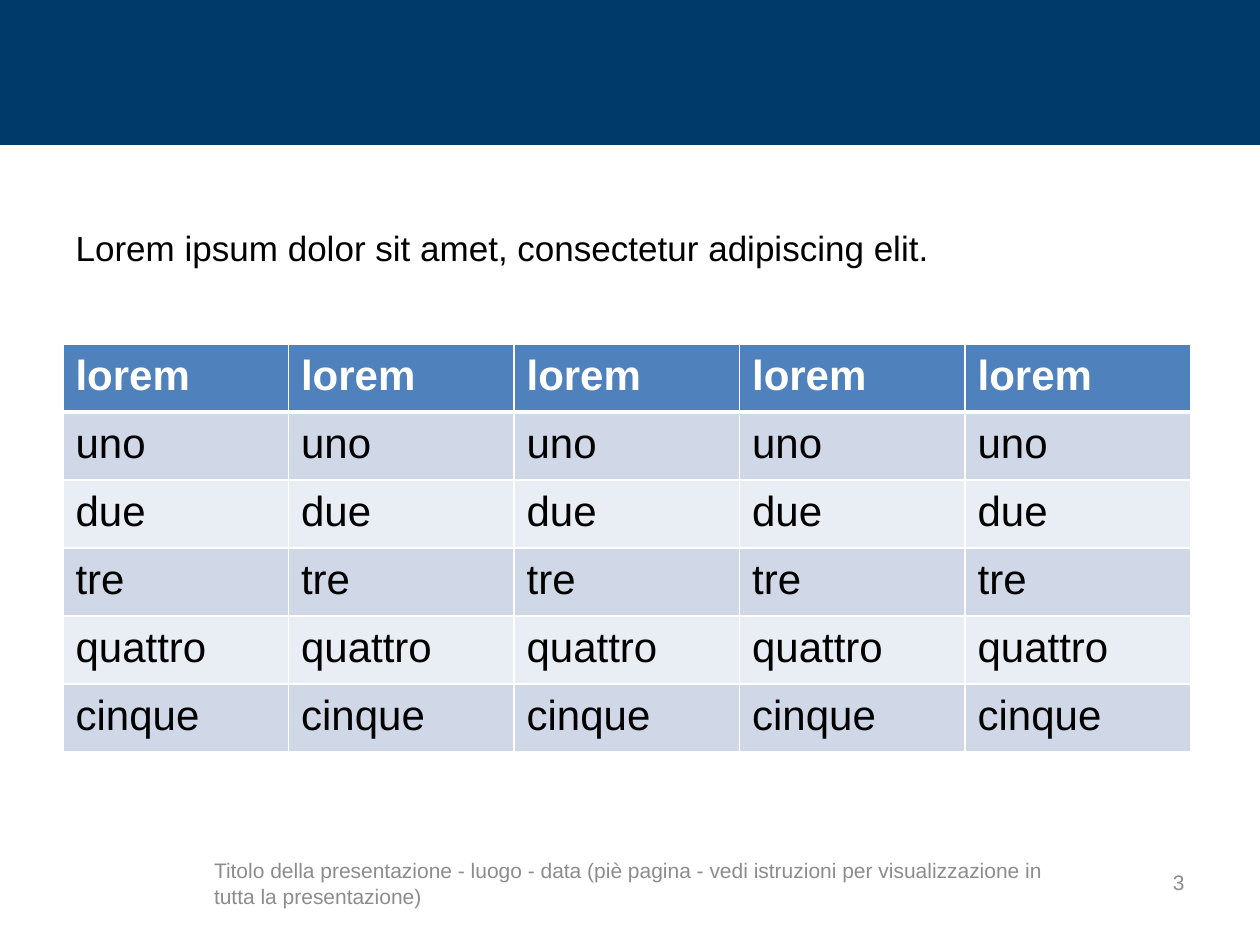
from dataclasses import dataclass

from lxml import etree
from pptx import Presentation
from pptx import util as u
from pptx.dml.color import RGBColor
from pptx.enum import shapes, text
from pptx.oxml import ns


@dataclass(frozen=True)
class Theme:
    font: str = "Arial"
    band: str = "003A6A"
    header: str = "4F81BD"
    stripes: tuple[str, str] = ("D0D8E8", "E9EDF4")
    white: str = "FFFFFF"
    ink: str = "000000"
    muted: str = "8C8C8C"
    body_size: int = 20
    table_size: int = 24
    footer_size: int = 12


@dataclass(frozen=True)
class Box:
    left: float
    top: float
    width: float
    height: float

    def lengths(self) -> tuple[u.Length, ...]:
        return tuple(u.Inches(v) for v in (self.left, self.top, self.width, self.height))


@dataclass(frozen=True)
class FooterItem:
    wording: str
    box: Box
    align: text.PP_ALIGN


THEME = Theme()
COLUMNS = 5
ROWS = ("lorem", "uno", "due", "tre", "quattro", "cinque")
TABLE_BOX = Box(0.5, 2.73, 8.95, 3.24)
FOOTER_ITEMS = (
    FooterItem("3", Box(7.17, 6.8, 2.33, 0.4), text.PP_ALIGN.RIGHT),
    FooterItem(
        "Titolo della presentazione - luogo - data (piè pagina - vedi istruzioni "
        "per visualizzazione in tutta la presentazione)",
        Box(1.6, 6.81, 7.09, 0.4),
        text.PP_ALIGN.LEFT,
    ),
)


def write(frame, wording: str, *, size: int, color: str, bold: bool = False,
          align=text.PP_ALIGN.LEFT) -> None:
    paragraph = frame.paragraphs[0]
    paragraph.alignment = align
    paragraph.space_before = u.Pt(0)
    run = paragraph.add_run()
    run.text = wording
    run.font.name = THEME.font
    run.font.size = u.Pt(size)
    run.font.bold = bold
    run.font.color.rgb = RGBColor.from_string(color)


def add_band(slide, box: Box) -> None:
    band = slide.shapes.add_shape(shapes.MSO_SHAPE.RECTANGLE, *box.lengths())
    band.shadow.inherit = False
    band.fill.solid()
    band.fill.fore_color.rgb = RGBColor.from_string(THEME.band)
    band.line.fill.background()


def fill_body(body, wording: str, box: Box) -> None:
    body.left, body.top, body.width, body.height = box.lengths()
    frame = body.text_frame
    frame.auto_size = text.MSO_AUTO_SIZE.SHAPE_TO_FIT_TEXT
    properties = frame.paragraphs[0]._p.get_or_add_pPr()
    properties.set("marL", "0")
    properties.set("indent", "0")
    etree.SubElement(properties, ns.qn("a:buNone"))
    write(frame, wording, size=THEME.body_size, color=THEME.ink)


def set_borders(cell, weights: dict[str, int]) -> None:
    properties = cell._tc.get_or_add_tcPr()
    for side, weight in weights.items():
        line = etree.SubElement(properties, ns.qn(f"a:ln{side}"), w=str(u.Pt(weight)))
        solid = etree.SubElement(line, ns.qn("a:solidFill"))
        etree.SubElement(solid, ns.qn("a:srgbClr"), val=THEME.white)


def add_numbers_table(slide, box: Box) -> None:
    table = slide.shapes.add_table(len(ROWS), COLUMNS, *box.lengths()).table
    for column in table.columns:
        column.width = u.Inches(box.width / COLUMNS)
    for index, wording in enumerate(ROWS):
        table.rows[index].height = u.Inches(box.height / len(ROWS))
        is_header = index == 0
        fill = THEME.header if is_header else THEME.stripes[(index - 1) % 2]
        weights = {"L": 1, "R": 1, "T": 3 if index == 1 else 1, "B": 3 if is_header else 1}
        for cell in table.rows[index].cells:
            set_borders(cell, weights)
            cell.margin_left = cell.margin_right = u.Inches(0.1)
            cell.margin_top = cell.margin_bottom = u.Inches(0.07)
            cell.fill.solid()
            cell.fill.fore_color.rgb = RGBColor.from_string(fill)
            write(cell.text_frame, wording, size=THEME.table_size, bold=is_header,
                  color=THEME.white if is_header else THEME.ink)


def add_footer_item(slide, item: FooterItem) -> None:
    frame = slide.shapes.add_textbox(*item.box.lengths()).text_frame
    frame.word_wrap = True
    frame.vertical_anchor = text.MSO_ANCHOR.MIDDLE
    write(frame, item.wording, size=THEME.footer_size, color=THEME.muted, align=item.align)


def main() -> None:
    deck = Presentation()
    deck.slide_width, deck.slide_height = u.Inches(10), u.Inches(7.5)
    slide = deck.slides.add_slide(deck.slide_layouts[1])
    empty_title = slide.shapes.title._element
    empty_title.getparent().remove(empty_title)

    add_band(slide, Box(0, 0, 10, 1.15))
    fill_body(slide.placeholders[1],
              "Lorem ipsum dolor sit amet, consectetur adipiscing elit.",
              Box(0.5, 1.75, 9, 0.44))
    add_numbers_table(slide, TABLE_BOX)
    for item in FOOTER_ITEMS:
        add_footer_item(slide, item)
    deck.save("out.pptx")


if __name__ == "__main__":
    main()
